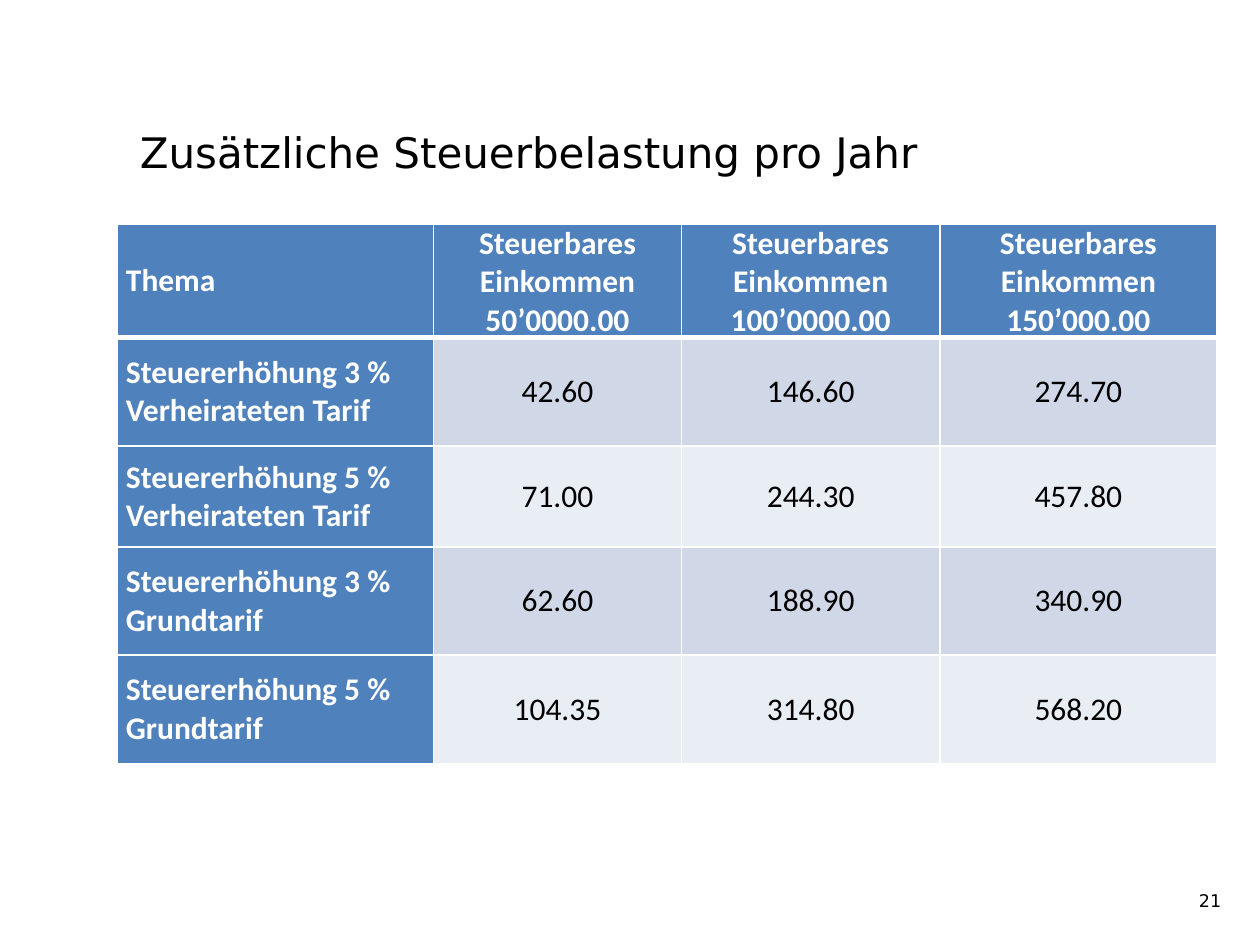
import pptx
import pptx.dml.color
import pptx.enum.text
import pptx.oxml
import pptx.oxml.ns
import pptx.util
from pptx.util import Inches

RGBColor = pptx.dml.color.RGBColor
PP_ALIGN = pptx.enum.text.PP_ALIGN
MIDDLE = pptx.enum.text.MSO_ANCHOR.MIDDLE

BLACK = RGBColor(0x00, 0x00, 0x00)
WHITE = RGBColor(0xFF, 0xFF, 0xFF)
BLUE = RGBColor(0x4F, 0x81, 0xBD)
BAND_DARK = RGBColor(0xD0, 0xD8, 0xE8)
BAND_LIGHT = RGBColor(0xE9, 0xED, 0xF4)

COLUMN_WIDTHS = [2.51, 1.97, 2.05, 2.2]
ROW_HEIGHTS = [0.86, 0.86, 0.8, 0.86, 0.86]
ROWS = [
    ["Thema", "Steuerbares Einkommen 50’0000.00",
     "Steuerbares Einkommen 100’0000.00", "Steuerbares Einkommen 150’000.00"],
    ["Steuererhöhung 3 %\nVerheirateten Tarif", "42.60", "146.60", "274.70"],
    ["Steuererhöhung 5 % Verheirateten Tarif", "71.00", "244.30", "457.80"],
    ["Steuererhöhung 3 %\nGrundtarif", "62.60", "188.90", "340.90"],
    ["Steuererhöhung 5 %\nGrundtarif", "104.35", "314.80", "568.20"],
]


def format_text(text_frame, font_name, size, color, alignment, bold=False):
    for paragraph in text_frame.paragraphs:
        paragraph.alignment = alignment
        for run in paragraph.runs:
            run.font.name = font_name
            run.font.size = pptx.util.Pt(size)
            run.font.bold = bold
            run.font.color.rgb = color


def set_borders(cell, bottom_width):
    # Borders have to stand before the fill in the cell properties
    properties = cell._tc.get_or_add_tcPr()
    widths = {"lnL": 1, "lnR": 1, "lnT": 1, "lnB": bottom_width}
    for position, (side, width) in enumerate(widths.items()):
        properties.insert(position, pptx.oxml.parse_xml(
            f'<a:{side} {pptx.oxml.ns.nsdecls("a")} w="{pptx.util.Pt(width)}">'
            f'<a:solidFill><a:srgbClr val="{WHITE}"/></a:solidFill></a:{side}>'))


presentation = pptx.Presentation()
presentation.slide_width = Inches(10)
presentation.slide_height = Inches(7.5)
slide = presentation.slides.add_slide(presentation.slide_layouts[5])

# Title
title = slide.shapes.title
title.left, title.top = Inches(1.01), Inches(0.92)
title.width, title.height = Inches(8.85), Inches(0.56)
title.text_frame.text = "Zusätzliche Steuerbelastung pro Jahr"
title.text_frame.vertical_anchor = MIDDLE
format_text(title.text_frame, "DejaVu Sans", 24, BLACK, PP_ALIGN.LEFT)

# Slide number
number_box = slide.shapes.add_textbox(Inches(7.46), Inches(6.95), Inches(2.33), Inches(0.4))
number_box.text_frame.word_wrap = True
number_box.text_frame.text = "21"
number_box.text_frame.vertical_anchor = MIDDLE
format_text(number_box.text_frame, "DejaVu Sans", 10, BLACK, PP_ALIGN.RIGHT)

# Tax table
table = slide.shapes.add_table(
    len(ROWS), len(COLUMN_WIDTHS), Inches(0.93), Inches(1.78),
    Inches(sum(COLUMN_WIDTHS)), Inches(sum(ROW_HEIGHTS))).table
table.first_col = True
for column, width in zip(table.columns, COLUMN_WIDTHS):
    column.width = Inches(width)
for row, height in zip(table.rows, ROW_HEIGHTS):
    row.height = Inches(height)

for row_index, texts in enumerate(ROWS):
    for column_index, text in enumerate(texts):
        cell = table.cell(row_index, column_index)
        is_heading = row_index == 0 or column_index == 0
        cell.text_frame.text = text
        cell.vertical_anchor = MIDDLE
        cell.margin_left = cell.margin_right = Inches(0.07)
        cell.margin_top = cell.margin_bottom = 0
        format_text(cell.text_frame, "Calibri", 18,
                    WHITE if is_heading else BLACK,
                    PP_ALIGN.CENTER if column_index else PP_ALIGN.LEFT, is_heading)
        band = BAND_DARK if row_index % 2 else BAND_LIGHT
        cell.fill.solid()
        cell.fill.fore_color.rgb = BLUE if is_heading else band
        set_borders(cell, 1 if row_index else 3)

presentation.save("out.pptx")
